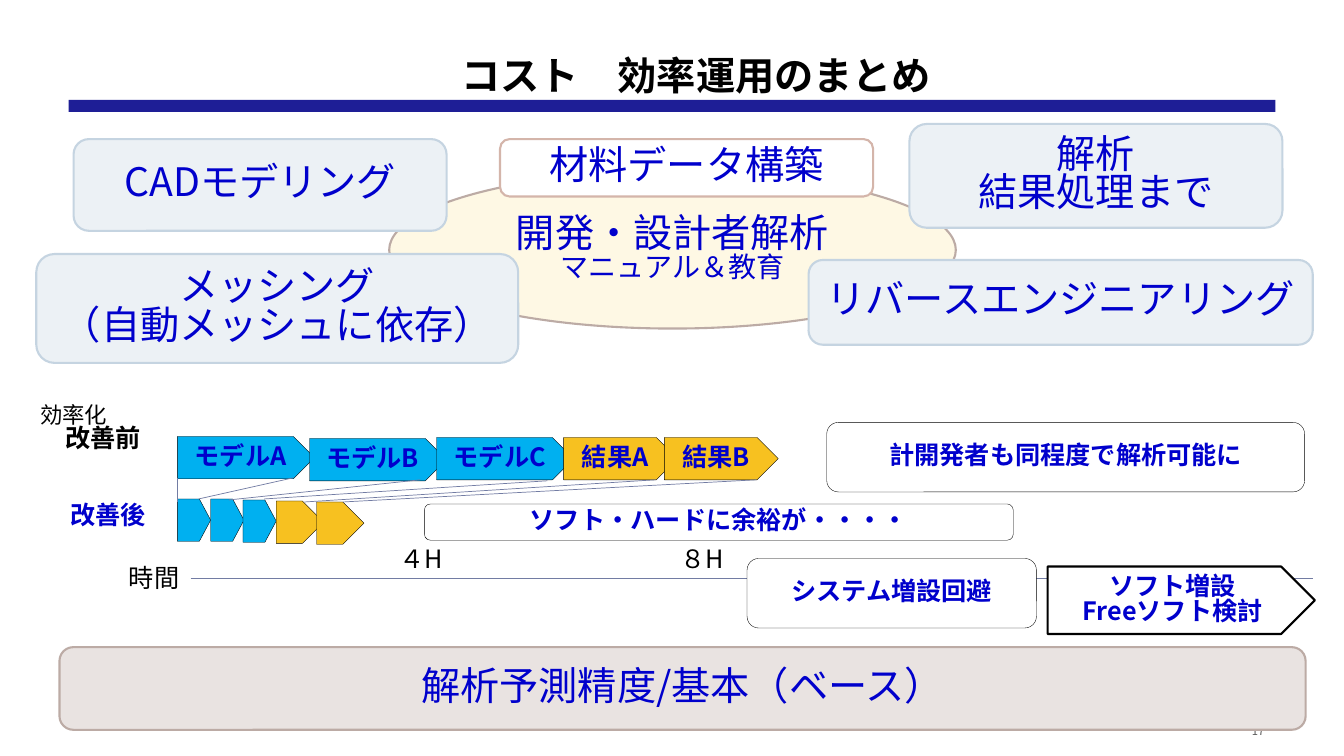
from lxml import etree
from pptx import Presentation
from pptx.dml.color import RGBColor
from pptx.enum.shapes import MSO_CONNECTOR, MSO_SHAPE
from pptx.enum.text import MSO_ANCHOR, MSO_AUTO_SIZE, PP_ALIGN
from pptx.oxml.ns import qn
from pptx.util import Pt

PX = 9144
FONT = "Noto Sans CJK JP"
LINE_SPACING = 0.82
COLORS = {
    "black": "000000", "white": "FFFFFF", "gray": "595959",
    "navy": "1E1E96", "blue": "0000CC", "slate": "727CA3",
    "pale": "ECF1F5", "pale_edge": "C5D4E1",
    "cream": "FEF8E4", "taupe": "BCABA5", "base": "E9E3E1", "rose": "D4B5AA",
    "sky": "00B0F0", "amber": "F7C120",
}
RECTANGLE = MSO_SHAPE.RECTANGLE
ROUNDED = MSO_SHAPE.ROUNDED_RECTANGLE
OVAL = MSO_SHAPE.OVAL
PENTAGON = MSO_SHAPE.PENTAGON
STRAIGHT = MSO_CONNECTOR.STRAIGHT
MIDDLE, TOP = MSO_ANCHOR.MIDDLE, MSO_ANCHOR.TOP
LEFT, CENTER, RIGHT = PP_ALIGN.LEFT, PP_ALIGN.CENTER, PP_ALIGN.RIGHT
NO_AUTOFIT = MSO_AUTO_SIZE.NONE

PALE_BOXES = [
    ((73, 138, 370, 91), "CADモデリング"),
    ((36, 252, 478, 108), "メッシング\n（自動メッシュに依存）"),
    ((902, 123, 370, 103), "解析\n結果処理まで"),
    ((802, 258, 500, 84), "リバースエンジニアリング"),
]
STEPS_BEFORE = [
    ((176, 433, 136, 42), "sky", "モデルA"),
    ((307, 435, 136, 42), "sky", "モデルB"),
    ((433, 434, 136, 42), "sky", "モデルC"),
    ((559, 434, 113, 42), "amber", "結果A"),
    ((659, 434, 113, 42), "amber", "結果B"),
]
STEPS_AFTER = [
    ((176, 495, 33, 42), "sky"),
    ((209, 495, 33, 42), "sky"),
    ((241, 496, 33, 42), "sky"),
    ((274, 497, 47, 42), "amber"),
    ((314, 498, 47, 42), "amber"),
]
GUIDES = [
    (176, 474, 176, 498),
    (291, 474, 197, 495),
    (417, 476, 227, 496),
    (543, 477, 262, 495),
    (650, 476, 302, 498),
    (750, 476, 340, 498),
]
EFFECTS = [
    ((421, 500, 584, 36), "ソフト・ハードに余裕が・・・・"),
    ((820, 419, 474, 69), "計開発者も同程度で解析可能に"),
    ((741, 554, 287, 69), "システム増設回避"),
]


def scaled(box):
    return [value * PX for value in box]


def rgb(name):
    return RGBColor.from_string(COLORS[name])


def format_paragraph(paragraph, size, color, bold=False, align=CENTER):
    paragraph.alignment = align
    paragraph.line_spacing = LINE_SPACING
    for run in paragraph.runs:
        run.font.size = Pt(size)
        run.font.bold = bold
        run.font.color.rgb = rgb(color)
        run.font.name = FONT
        properties = run.font._element
        etree.SubElement(properties, qn("a:ea")).set("typeface", FONT)


def write_text(text_frame, text, size, color, bold=False, align=CENTER, anchor=MIDDLE):
    text_frame.word_wrap = True
    text_frame.auto_size = NO_AUTOFIT
    text_frame.vertical_anchor = anchor
    text_frame.text = text
    for paragraph in text_frame.paragraphs:
        format_paragraph(paragraph, size, color, bold, align)


def add_title(slide, box, text):
    title = slide.shapes.title
    title.left, title.top, title.width, title.height = scaled(box)
    write_text(title.text_frame, text, 28, "black", True)


def add_box(slide, kind, box, fill, line=None, weight=0.25, text="", size=18, bold=False):
    shape = slide.shapes.add_shape(kind, *scaled(box))
    shape.shadow.inherit = False
    shape.fill.solid()
    shape.fill.fore_color.rgb = rgb(fill)
    if line:
        shape.line.color.rgb = rgb(line)
        shape.line.width = Pt(weight)
    else:
        shape.line.fill.background()
    if text:
        write_text(shape.text_frame, text, size, "blue", bold)
    return shape


def add_label(slide, box, text, size=18, color="black", bold=False, align=LEFT, anchor=TOP):
    label = slide.shapes.add_textbox(*scaled(box))
    write_text(label.text_frame, text, size, color, bold, align, anchor)
    return label


def add_line(slide, ends, weight):
    line = slide.shapes.add_connector(STRAIGHT, *scaled(ends))
    line.line.color.rgb = rgb("slate")
    line.line.width = Pt(weight)
    etree.SubElement(line._element.spPr, qn("a:effectLst"))


def add_before_label(slide):
    label = add_label(slide, (30, 398, 146, 67), "効率化\n改善前", 16)
    heading = label.text_frame.paragraphs[1]
    heading.runs[0].font.size = Pt(18)
    heading.runs[0].font.bold = True
    heading._p.get_or_add_pPr().set("marL", str(25 * PX))


def add_topics(slide):
    add_box(slide, OVAL, (386, 170, 562, 156), "cream", "taupe", 1.5,
            "開発・設計者解析\nマニュアル＆教育", 28)
    ellipse = slide.shapes[-1]
    ellipse.text_frame.paragraphs[1].runs[0].font.size = Pt(20)
    for box, text in PALE_BOXES:
        add_box(slide, ROUNDED, box, "pale", "pale_edge", 1.5, text, 28)
    add_box(slide, ROUNDED, (496, 138, 370, 57), "white", "rose", 1.5, "材料データ構築", 28)
    add_box(slide, ROUNDED, (59, 642, 1236, 82), "base", "taupe", 1.5,
            "解析予測精度/基本（ベース）", 28)


def add_timeline(slide):
    add_line(slide, (189, 574, 1302, 574), 0.75)
    add_box(slide, PENTAGON, (1039, 562, 265, 67), "white", "black", 1.5,
            "ソフト増設\nFreeソフト検討", 18, True)
    add_before_label(slide)
    add_label(slide, (60, 496, 117, 40), "改善後", color="blue", bold=True)
    add_label(slide, (118, 558, 76, 40), "時間")
    for left, hours in ((386, "４H"), (665, "８H")):
        add_label(slide, (left, 539, 76, 40), hours)
    for box, fill, text in STEPS_BEFORE:
        add_box(slide, PENTAGON, box, fill, "black", text=text, bold=True)
    for box, fill in STEPS_AFTER:
        step = add_box(slide, PENTAGON, box, fill, "black")
        if fill == "sky":
            step.adjustments[0] = 0.34
    for ends in GUIDES:
        add_line(slide, ends, 0.5)
    for box, text in EFFECTS:
        add_box(slide, ROUNDED, box, "white", "black", text=text, bold=True)


def main():
    presentation = Presentation()
    presentation.slide_width, presentation.slide_height = scaled((1333, 750))
    slide = presentation.slides.add_slide(presentation.slide_layouts[5])
    add_label(slide, (986, 714, 278, 25), "17", 8, "gray", align=RIGHT, anchor=MIDDLE)
    add_box(slide, RECTANGLE, (68, 99, 1197, 12), "navy")
    add_title(slide, (155, 50, 1071, 57), "コスト　効率運用のまとめ")
    add_topics(slide)
    add_timeline(slide)
    presentation.save("out.pptx")


if __name__ == "__main__":
    main()
